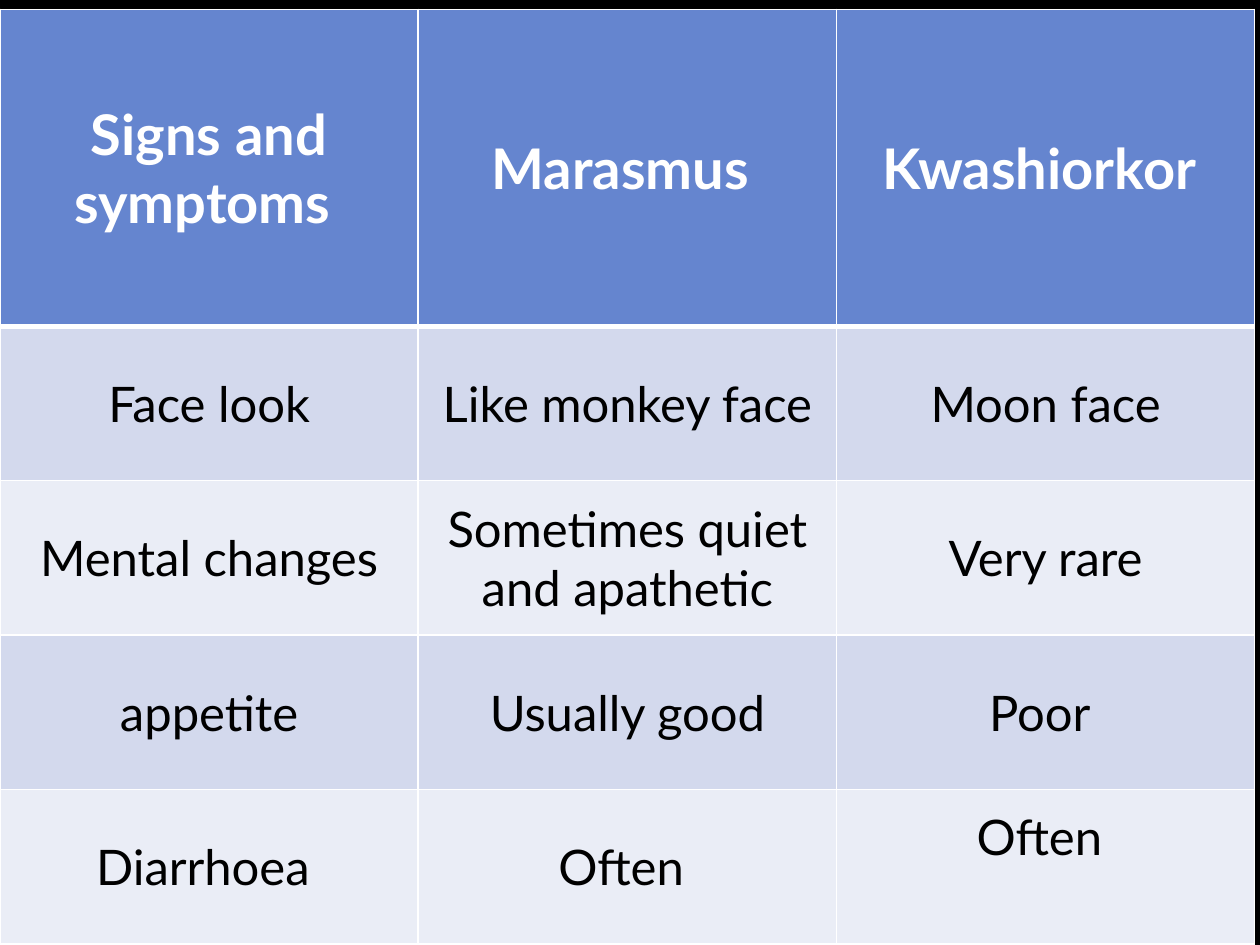
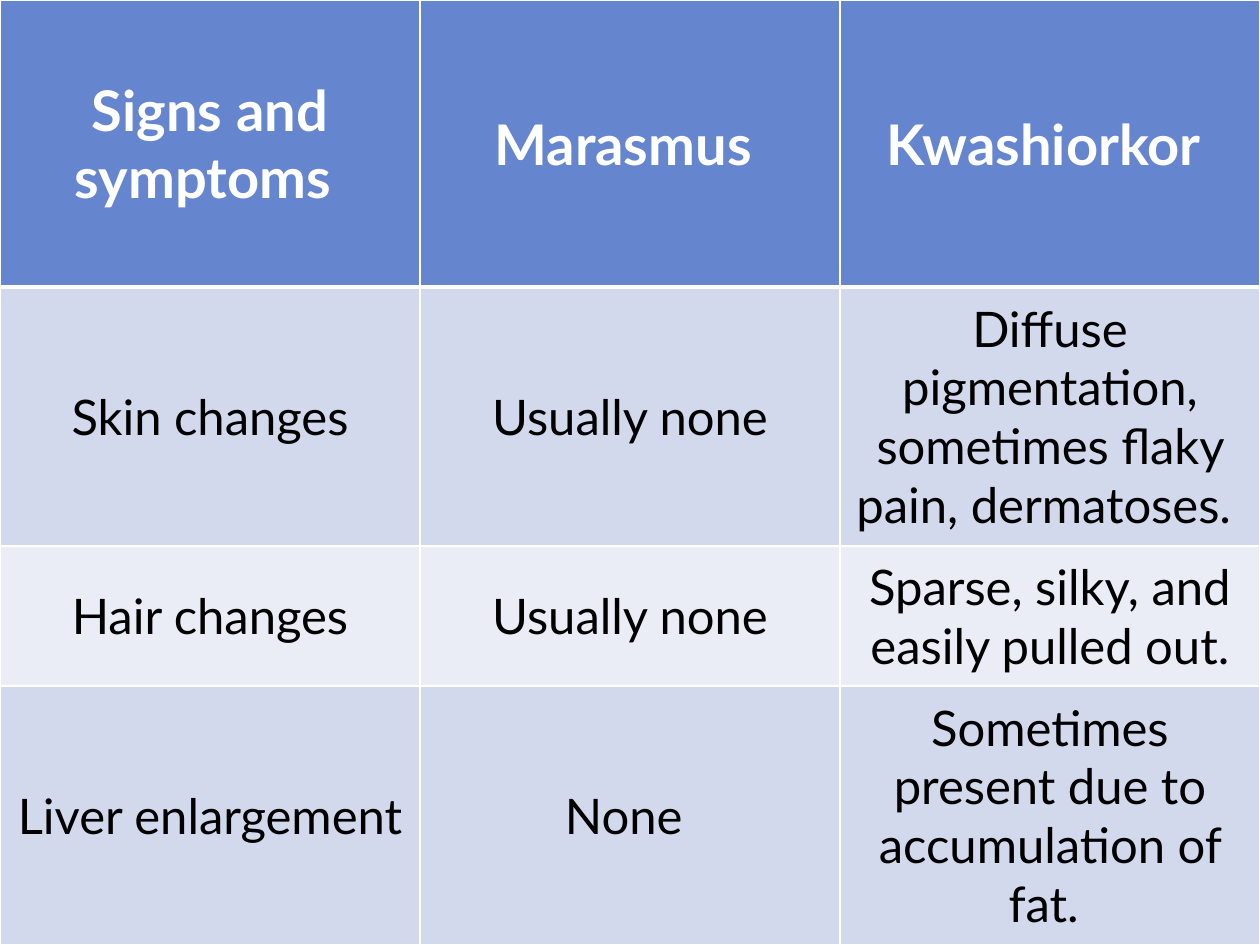
from lxml.etree import SubElement
from pptx import Presentation
from pptx.dml.color import RGBColor
from pptx.enum.text import MSO_ANCHOR, PP_ALIGN
from pptx.oxml.ns import qn
from pptx.util import Pt

FONT = "Lato"
BACKGROUND, WHITE, BLACK = "000000", "FFFFFF", "000000"
HEADER_FILL = "6585CF"
BAND_FILLS = ["EAEDF6", "D3D9ED"]  # even rows, odd rows
HEADINGS = ["Signs and symptoms ", "Marasmus ", "Kwashiorkor "]

COMPARISONS = [
    {
        "top": 5.4,
        "column_width": 239,
        "row_heights": [181] + [88.25] * 4,
        "findings": [
            ["Face look", "Like monkey face", "Moon face"],
            ["Mental changes", "Sometimes quiet and apathetic", "Very rare"],
            ["appetite", "Usually good", "Poor "],
            ["Diarrhoea ", "Often ", "Often "],
        ],
        "raised_cell": (4, 2),
    },
    {
        "top": 0,
        "column_width": 240,
        "row_heights": [164, 148, 80, 148],
        "findings": [
            ["Skin changes", "Usually none",
             "Diffuse pigmentation, sometimes flaky pain, dermatoses. "],
            ["Hair changes", "Usually none",
             "Sparse, silky, and easily pulled out."],
            ["Liver enlargement", "None ",
             "Sometimes present due to accumulation of fat. "],
        ],
        "raised_cell": None,
    },
]


def color(hex_code):
    return RGBColor.from_string(hex_code)


def add_borders(cell, widths):
    """Draw white left, right, top and bottom borders; call before filling the cell."""
    properties = cell._tc.get_or_add_tcPr()
    for side, width in zip("LRTB", widths):
        line = SubElement(properties, qn(f"a:ln{side}"), w=str(Pt(width)))
        fill = SubElement(line, qn("a:solidFill"))
        SubElement(fill, qn("a:srgbClr"), val=WHITE)


deck = Presentation()
deck.slide_width, deck.slide_height = Pt(720), Pt(540)

for comparison in COMPARISONS:
    slide = deck.slides.add_slide(deck.slide_layouts[6])
    slide.background.fill.solid()
    slide.background.fill.fore_color.rgb = color(BACKGROUND)

    rows = [HEADINGS] + comparison["findings"]
    heights = comparison["row_heights"]
    column_width = comparison["column_width"]
    table = slide.shapes.add_table(
        len(rows), len(HEADINGS), Pt(0), Pt(comparison["top"]),
        Pt(column_width * len(HEADINGS)), Pt(sum(heights)),
    ).table
    table.horz_banding = False
    for column in table.columns:
        column.width = Pt(column_width)

    for r, (texts, height) in enumerate(zip(rows, heights)):
        table.rows[r].height = Pt(height)
        is_header = r == 0
        for c, text in enumerate(texts):
            cell = table.cell(r, c)
            add_borders(cell, [1, 1, 3 if r == 1 else 1, 3 if is_header else 1])
            cell.fill.solid()
            cell.fill.fore_color.rgb = color(HEADER_FILL if is_header else BAND_FILLS[r % 2])
            cell.vertical_anchor = MSO_ANCHOR.MIDDLE
            if (r, c) == comparison["raised_cell"]:
                cell.margin_bottom = Pt(37.6)
            cell.text = text
            paragraph = cell.text_frame.paragraphs[0]
            paragraph.alignment = PP_ALIGN.CENTER
            paragraph.font.name = FONT
            paragraph.font.size = Pt(32 if is_header else 28)
            paragraph.font.bold = is_header
            paragraph.font.color.rgb = color(WHITE if is_header else BLACK)

deck.save("out.pptx")
